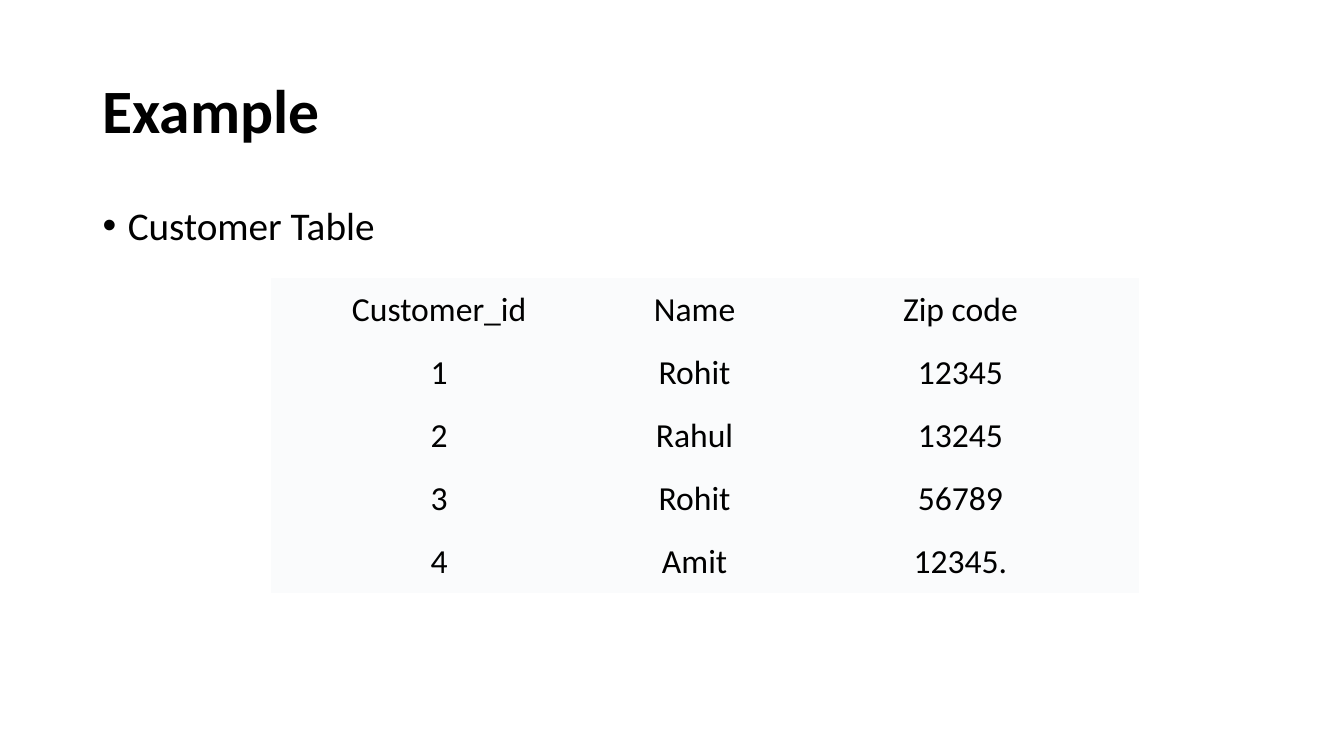
from dataclasses import dataclass

from pptx import Presentation
from pptx.dml.color import RGBColor as RGB
from pptx.enum.text import MSO_ANCHOR as ANCHOR, PP_ALIGN as ALIGN
from pptx.oxml.ns import qn
from pptx.oxml.xmlchemy import OxmlElement
from pptx.util import Inches, Pt


@dataclass(frozen=True)
class Theme:
    font: str = "Calibri"
    ink: RGB = RGB(0, 0, 0)
    cell: RGB = RGB(0xFA, 0xFB, 0xFC)
    title: int = 44
    body: int = 28
    table: int = 24
    plain_table: str = "{2D5ABB26-0587-4C30-8999-92F81FD0307C}"


class Deck:
    COLS, ROWS = 58, 60

    def __init__(self, theme):
        self.theme = theme
        self.prs = Presentation()
        self.prs.slide_width, self.prs.slide_height = Inches(13.33), Inches(7.5)
        self.slide = self.prs.slides.add_slide(self.prs.slide_layouts[6])

    def x(self, cols):
        return round(self.prs.slide_width * cols / self.COLS)

    def y(self, rows):
        return round(self.prs.slide_height * rows / self.ROWS)

    def run(self, p, text, size, bold=False):
        r = p.add_run()
        r.text = text
        r.font.name, r.font.size, r.font.bold = self.theme.font, Pt(size), bold
        r.font.color.rgb = self.theme.ink

    def box(self, col, row, width, height, anchor):
        s = self.slide.shapes.add_textbox(
            self.x(col), self.y(row), self.x(width), self.y(height))
        tf = s.text_frame
        tf.word_wrap = True
        tf.vertical_anchor = anchor
        p = tf.paragraphs[0]
        p.line_spacing = 0.9
        return p

    def title(self, text, *area):
        self.run(self.box(*area, ANCHOR.MIDDLE), text, self.theme.title, bold=True)

    def bullet(self, text, *area):
        p = self.box(*area, ANCHOR.TOP)
        p.space_before = Pt(10)
        self.run(p, text, self.theme.body)
        # Hanging bullet
        ppr = p._p.get_or_add_pPr()
        ppr.set("marL", str(Inches(0.25)))
        ppr.set("indent", str(-Inches(0.25)))
        font, mark = OxmlElement("a:buFont"), OxmlElement("a:buChar")
        font.set("typeface", "Arial")
        mark.set("char", "•")
        ppr.extend([font, mark])

    def table(self, data, col, row, widths, row_height):
        frame = self.slide.shapes.add_table(
            len(data), len(widths), self.x(col), self.y(row),
            self.x(sum(widths)), self.y(row_height * len(data)))
        table = frame.table
        table.horz_banding = table.first_row = False
        next(frame._element.iter(qn("a:tableStyleId"))).text = self.theme.plain_table
        for column, width in zip(table.columns, widths):
            column.width = self.x(width)
        for line, values in zip(table.rows, data):
            line.height = self.y(row_height)
            for cell, value in zip(line.cells, values):
                cell.fill.solid()
                cell.fill.fore_color.rgb = self.theme.cell
                cell.vertical_anchor = ANCHOR.MIDDLE
                p = cell.text_frame.paragraphs[0]
                p.alignment = ALIGN.CENTER
                self.run(p, value, self.theme.table)


CUSTOMERS = [
    ("Customer_id", "Name", "Zip code"),
    ("1", "Rohit", "12345"),
    ("2", "Rahul", "13245"),
    ("3", "Rohit", "56789"),
    ("4", "Amit", "12345."),
]


def main():
    deck = Deck(Theme())
    # Heading and lead-in
    deck.title("Example", 4, 3.2, 50, 11.6)
    deck.bullet("Customer Table", 4, 16, 50, 38)
    # Customer records
    deck.table(CUSTOMERS, 11.7, 22.1, (14.5, 7.55, 15.4), 5)
    deck.prs.save("out.pptx")


if __name__ == "__main__":
    main()
